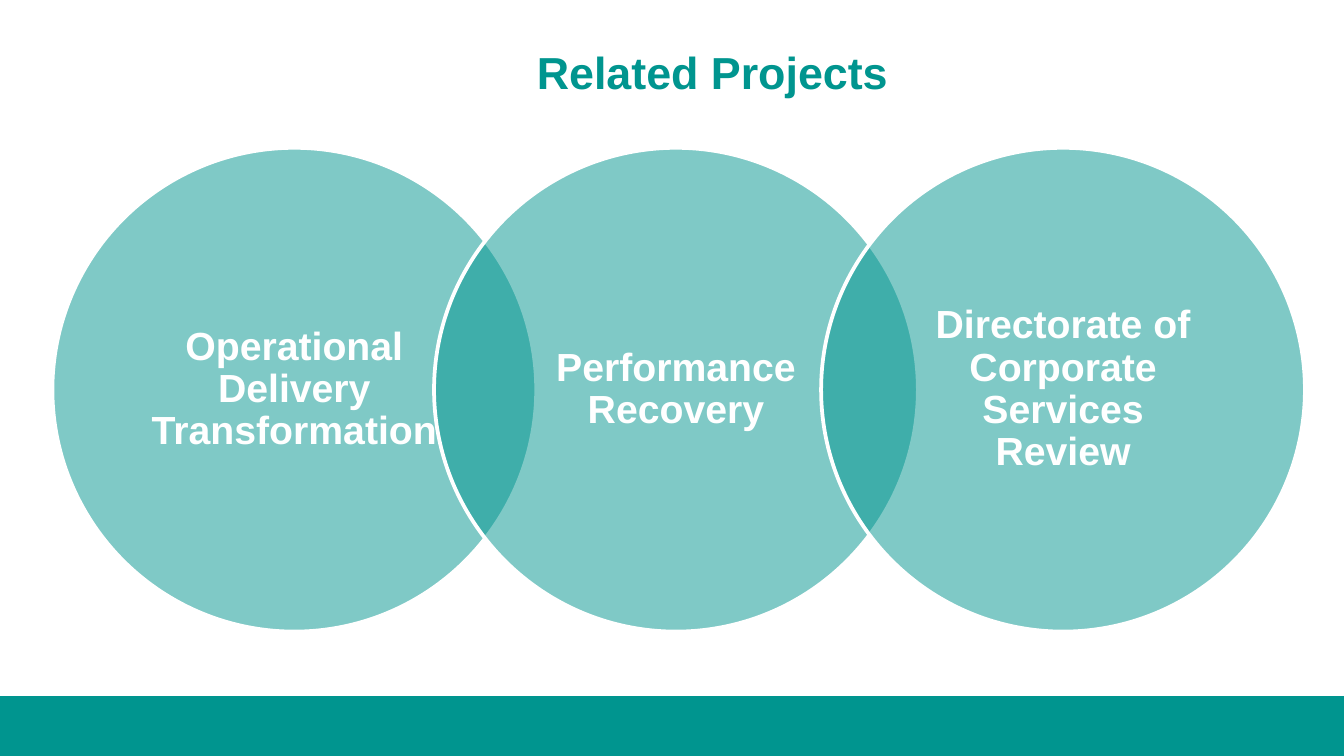
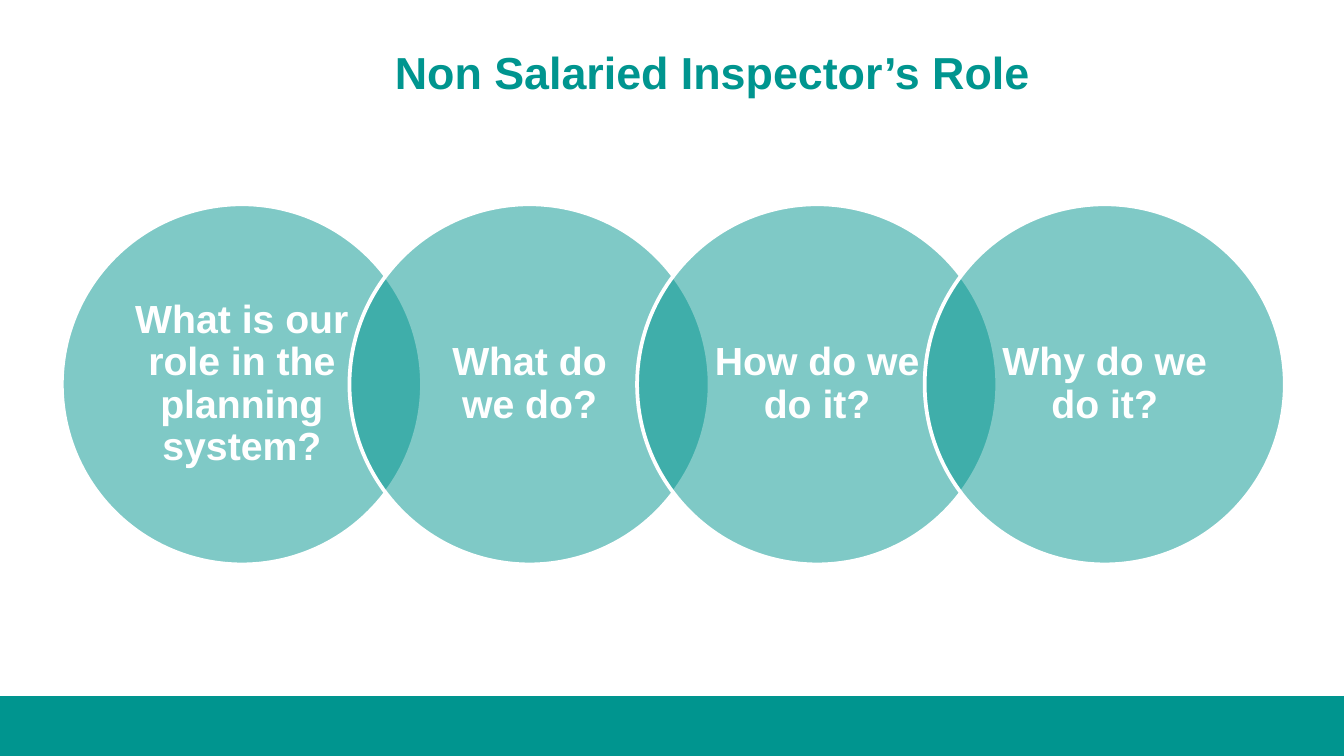
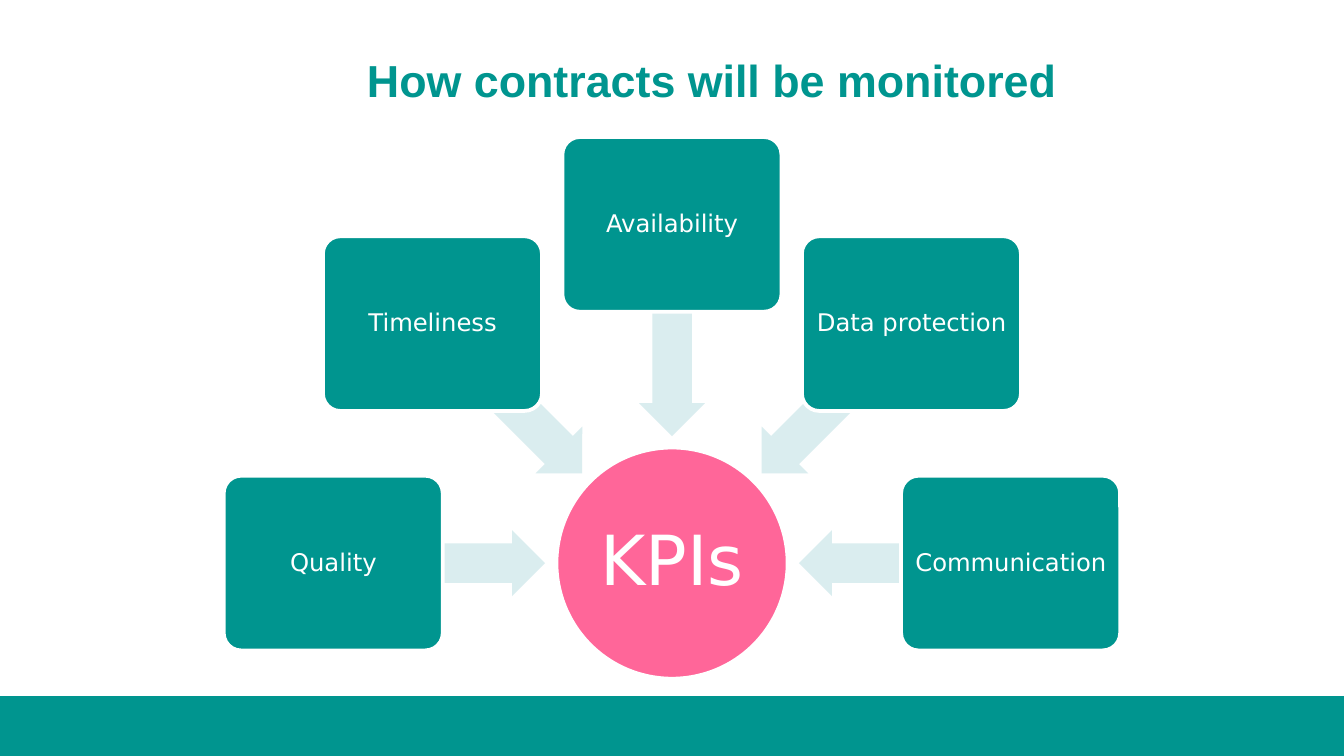
from math import cos, radians, sin, sqrt

from pptx import Presentation
from pptx.dml.color import RGBColor
from pptx.enum.shapes import MSO_SHAPE as Preset
from pptx.enum.text import MSO_ANCHOR as Anchor, PP_ALIGN as Align
from pptx.oxml.ns import qn
from pptx.util import Inches, Pt

# Shared look
TEAL = RGBColor(0x00, 0x95, 0x8F)
PALE_TEAL = RGBColor(0xDA, 0xED, 0xEF)
PINK = RGBColor(0xFF, 0x66, 0x99)
WHITE = RGBColor(0xFF, 0xFF, 0xFF)
HEADING_FONT = "Arial"
DIAGRAM_FONT = "DejaVu Sans"
SLIDE_W = 10
SLIDE_H = SLIDE_W * 9 / 16
BAND_TOP = 5.18
BLANK_LAYOUT = 6


def add_text(shapes, text, left, top, width, height, *, size, font=HEADING_FONT,
             color=WHITE, bold=False, align=Align.CENTER, inset=(0.03, 0.03),
             spacing=0.9, indent=0):
    box = shapes.add_textbox(Inches(left), Inches(top), Inches(width), Inches(height))
    frame = box.text_frame
    frame.word_wrap = True
    frame.vertical_anchor = Anchor.MIDDLE
    frame.margin_left = frame.margin_right = Inches(inset[0])
    frame.margin_top = frame.margin_bottom = Inches(inset[1])
    paragraph = frame.paragraphs[0]
    paragraph.alignment = align
    paragraph.line_spacing = spacing
    if indent:
        paragraph._p.get_or_add_pPr().set("marL", str(Inches(indent)))
    run = paragraph.add_run()
    run.text = text
    run.font.name = font
    run.font.size = Pt(size)
    run.font.bold = bold
    run.font.color.rgb = color


def add_solid(shapes, preset, left, top, width, height, fill, outlined=False):
    solid = shapes.add_shape(preset, Inches(left), Inches(top),
                             Inches(width), Inches(height))
    solid.shadow.inherit = False
    solid.fill.solid()
    solid.fill.fore_color.rgb = fill
    if outlined:
        solid.line.color.rgb = WHITE
        solid.line.width = Pt(2)
    else:
        solid.line.fill.background()
    return solid


def make_translucent(solid, percent):
    color = solid._element.spPr.find(qn("a:solidFill"))[0]
    alpha = color.makeelement(qn("a:alpha"), {"val": str(percent * 1000)})
    color.append(alpha)


def add_heading(slide, text, box=(1.9, 0.21, 6.8, 0.64), inset=(0.1, 0.05),
                spacing=1.0, **options):
    add_text(slide.shapes, text, *box, size=24, color=TEAL, bold=True,
             inset=inset, spacing=spacing, **options)


def new_slide(prs):
    slide = prs.slides.add_slide(prs.slide_layouts[BLANK_LAYOUT])
    add_solid(slide.shapes, Preset.RECTANGLE, 0, BAND_TOP,
              SLIDE_W, SLIDE_H - BAND_TOP, TEAL)
    return slide


def add_venn_row(slide, topics, lefts, top, diameter):
    """Overlapping circles, each labelled in its inscribed square."""
    row = slide.shapes.add_group_shape().shapes
    side = diameter / sqrt(2)
    margin = (diameter - side) / 2
    for topic, left in zip(topics, lefts):
        circle = add_solid(row, Preset.OVAL, left, top, diameter, diameter,
                           TEAL, outlined=True)
        make_translucent(circle, 50)
        add_text(row, topic, left + margin, top + margin, side, side,
                 size=21, bold=True, inset=(0.055 * diameter, 0.03))


def add_converging_diagram(slide, hub, measures):
    """Boxes on a half circle, with arrows pointing to the hub."""
    diagram = slide.shapes.add_group_shape().shapes
    center_x, center_y = 5, 4.19
    arrow_radius, box_radius = 1.73, 2.52
    hub_size, label_size = 1.72, 1.21
    arrow_w, arrow_h = 1.57, 0.49
    box_w, box_h, pad = 1.63, 1.3, 0.04

    def around(angle, radius, width, height):
        x = center_x + radius * cos(radians(angle))
        y = center_y + radius * sin(radians(angle))
        return x - width / 2, y - height / 2, width, height

    add_solid(diagram, Preset.OVAL, *around(0, 0, hub_size, hub_size),
              PINK, outlined=True)
    add_text(diagram, hub, *around(0, 0, label_size, label_size),
             size=37, font=DIAGRAM_FONT)

    step = 180 / (len(measures) - 1)
    for index, measure in enumerate(measures):
        angle = (180 + index * step) % 360
        arrow = add_solid(diagram, Preset.LEFT_ARROW,
                          *around(angle, arrow_radius, arrow_w, arrow_h), PALE_TEAL)
        arrow.adjustments[0] = 0.6
        arrow.adjustments[1] = 0.5
        arrow.rotation = angle
        box = add_solid(diagram, Preset.ROUNDED_RECTANGLE,
                        *around(angle, box_radius, box_w, box_h), TEAL, outlined=True)
        box.adjustments[0] = 0.1
        add_text(diagram, measure,
                 *around(angle, box_radius, box_w - 2 * pad, box_h - 2 * pad),
                 size=13, font=DIAGRAM_FONT)


def main():
    prs = Presentation()
    prs.slide_width, prs.slide_height = Inches(SLIDE_W), Inches(SLIDE_H)

    # Related projects
    projects = new_slide(prs)
    add_heading(projects, "Related Projects")
    add_venn_row(projects,
                 ["Operational Delivery Transformation", "Performance Recovery",
                  "Directorate of Corporate Services Review"],
                 lefts=[0.39, 3.23, 6.11], top=1.1, diameter=3.6)

    # Inspector's role
    role = new_slide(prs)
    add_heading(role, "Non Salaried Inspector’s Role")
    questions = ["What is our role in the planning system?", "What do we do?",
                 "How do we do it?", "Why do we do it?"]
    add_venn_row(role, questions,
                 lefts=[0.46 + 2.14 * i for i in range(len(questions))],
                 top=1.52, diameter=2.68)

    # Contract monitoring
    monitoring = new_slide(prs)
    add_heading(monitoring, "How contracts will be monitored",
                box=(1.16, 0.15, 8.62, 0.93), align=Align.LEFT,
                inset=(0.07, 0.04), spacing=0.9, indent=1.5)
    add_converging_diagram(monitoring, "KPIs",
                           ["Quality", "Timeliness", "Availability",
                            "Data protection", "Communication"])

    prs.save("out.pptx")


if __name__ == "__main__":
    main()
